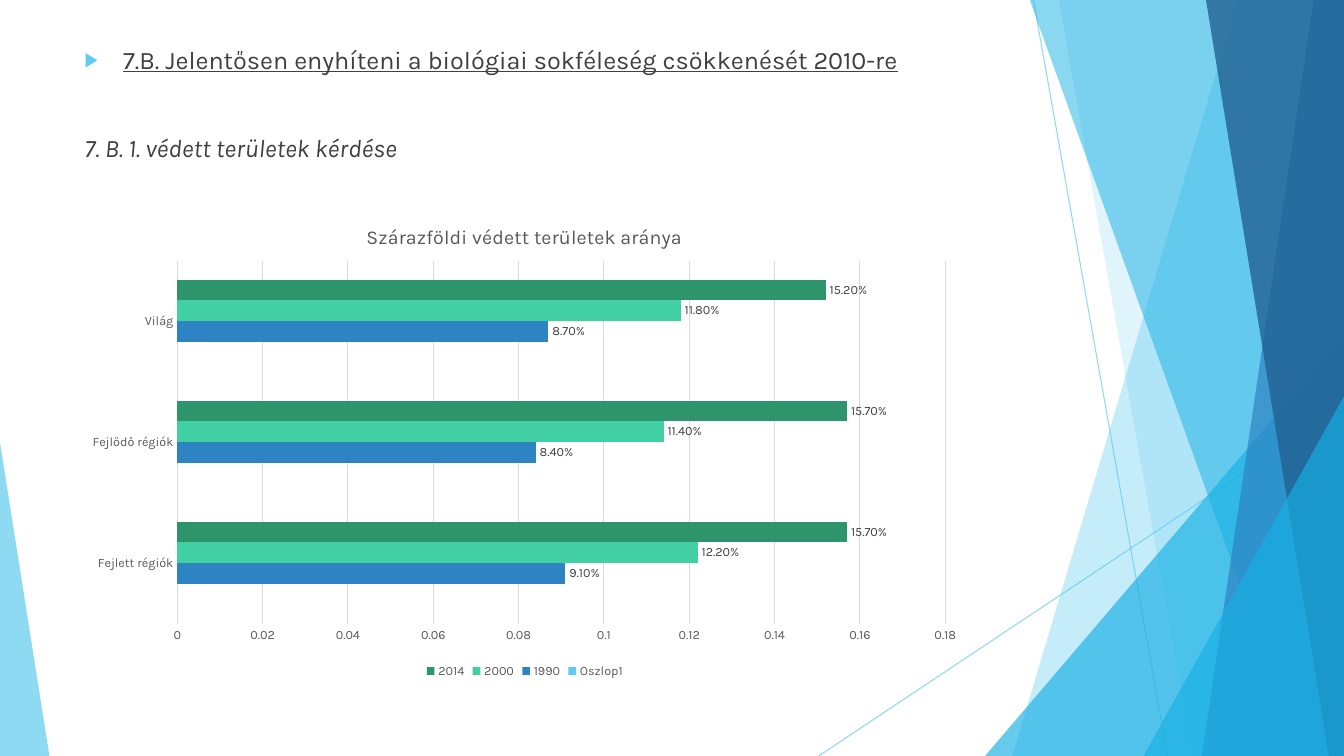
import pptx
import pptx.util
import pptx.chart.data
import pptx.dml.color
import pptx.enum.chart
import pptx.enum.shapes
import pptx.enum.text
import pptx.oxml
import pptx.oxml.ns
import lxml.etree

Inches, Pt = pptx.util.Inches, pptx.util.Pt
qn = pptx.oxml.ns.qn
FONT = "Karla"


def paint(color_format, color, alpha=100):
    color_format.rgb = pptx.dml.color.RGBColor.from_string(color)
    if alpha < 100:
        for node in color_format._xFill.iter(qn("a:srgbClr")):
            lxml.etree.SubElement(node, qn("a:alpha")).set("val", str(alpha * 1000))


def style(font, size, color):
    font.name, font.size, font.bold = FONT, Pt(size), False
    paint(font.color, color)


deck = pptx.Presentation()
deck.slide_width, deck.slide_height = Inches(13.33), Inches(7.5)
page = deck.slides.add_slide(deck.slide_layouts[1])
page.shapes.title.element.getparent().remove(page.shapes.title.element)
body = page.placeholders[1]

# Thin diagonal lines
for x1, y1, x2, y2 in [(10.25, 0, 11.58, 7.5), (13.33, 4.03, 8.12, 7.5)]:
    line = page.shapes.add_connector(pptx.enum.shapes.MSO_CONNECTOR.STRAIGHT,
                                     Inches(x1), Inches(y1), Inches(x2), Inches(y2))
    line.line.width = Pt(0.75)
    line.line.fill.solid()
    paint(line.line.fill.fore_color, "5FCBEF", 70)
    lxml.etree.SubElement(line.element.spPr, qn("a:effectLst"))

# Translucent facets: bands give top and bottom x of their left edge,
# triangles give left, top, width, height and apex position
facets = [
    ("band", (12.28, 10.04), "5FCBEF", 36),
    ("band", (10.5, 11.83), "5FCBEF", 20),
    ("triangle", (9.77, 3.33, 3.56, 4.17, 1), "17B0E4", 66),
    ("band", (10.21, 12.91), "17B0E4", 50),
    ("band", (13.03, 11.92), "2E83C3", 70),
    ("band", (11.96, 13.18), "226292", 80),
    ("triangle", (11.34, 3.93, 1.99, 3.57, 1), "17B0E4", 66),
    ("triangle", (0, 4.39, 0.49, 3.11, 0), "5FCBEF", 70),
]
for kind, numbers, color, alpha in facets:
    if kind == "band":
        top_x, bottom_x = numbers
        outline = page.shapes.build_freeform(Inches(top_x), Inches(-0.01))
        outline.add_line_segments([(Inches(x), Inches(y)) for x, y in
                                   [(13.33, -0.01), (13.33, 7.5), (bottom_x, 7.5)]])
        facet = outline.convert_to_shape()
    else:
        *frame, apex = numbers
        facet = page.shapes.add_shape(pptx.enum.shapes.MSO_SHAPE.ISOSCELES_TRIANGLE,
                                      *[Inches(n) for n in frame])
        facet.adjustments[0] = apex
    facet.shadow.inherit = False
    facet.line.fill.background()
    facet.fill.solid()
    paint(facet.fill.fore_color, color, alpha)

# Body text, in front of the facets
page.shapes._spTree.append(body.element)
body.left, body.top, body.width, body.height = [Inches(n) for n in (0.74, 0.39, 9.4, 6.22)]
body.text_frame.text = ("7.B. Jelentősen enyhíteni a biológiai sokféleség csökkenését 2010-re\n"
                        "7. B. 1. védett területek kérdése")
body.text_frame.vertical_anchor = pptx.enum.text.MSO_ANCHOR.TOP
goal, topic = body.text_frame.paragraphs
for para, space in [(goal, 10), (topic, 41)]:
    para.space_before = Pt(space)
    style(para.runs[0].font, 18, "404040")
goal.runs[0].font.underline = True
topic.runs[0].font.italic = True

goal_format = goal._p.get_or_add_pPr()
goal_format.set("marL", str(Inches(0.38)))
goal_format.set("indent", str(Inches(-0.38)))
bullet_color = lxml.etree.SubElement(goal_format, qn("a:buClr"))
lxml.etree.SubElement(bullet_color, qn("a:srgbClr")).set("val", "5FCBEF")
lxml.etree.SubElement(goal_format, qn("a:buSzPct")).set("val", "80000")
lxml.etree.SubElement(goal_format, qn("a:buChar")).set("char", "▶")
topic_format = topic._p.get_or_add_pPr()
topic_format.set("marL", "0")
topic_format.set("indent", "0")
lxml.etree.SubElement(topic_format, qn("a:buNone"))

# Chart of protected areas
series_rows = [
    ("Oszlop1", (None, None, None), "5FCBEF"),
    ("1990", (0.091, 0.084, 0.087), "2E83C3"),
    ("2000", (0.122, 0.114, 0.118), "42D0A2"),
    ("2014", (0.157, 0.157, 0.152), "2E946B"),
]
data = pptx.chart.data.CategoryChartData()
data.categories = ["Fejlett régiók", "Fejlődő régiók", "Világ"]
for name, values, color in series_rows:
    data.add_series(name, values)
chart = page.shapes.add_chart(pptx.enum.chart.XL_CHART_TYPE.BAR_CLUSTERED, Inches(0.74),
                              Inches(2), Inches(8.93), Inches(4.77), data).chart
style(chart.font, 10, "000000")
chart.has_title = True
chart.chart_title.text_frame.text = "Szárazföldi védett területek aránya"
style(chart.chart_title.text_frame.paragraphs[0].runs[0].font, 14, "595959")
chart.has_legend = True
chart.legend.position = pptx.enum.chart.XL_LEGEND_POSITION.BOTTOM
chart.legend.include_in_layout = False
style(chart.legend.font, 9, "595959")

# Bars and their labels
plot = chart.plots[0]
plot.gap_width, plot.overlap = 182, 0
plot.vary_by_categories = False
for series, (name, values, color) in zip(plot.series, series_rows):
    series.format.fill.solid()
    paint(series.format.fill.fore_color, color)
    labels = series.data_labels
    labels.show_value = True
    labels.number_format, labels.number_format_is_linked = "0.00%", False
    labels.position = pptx.enum.chart.XL_LABEL_POSITION.OUTSIDE_END
    style(labels.font, 9, "404040")

# Axes
categories, scale = chart.category_axis, chart.value_axis
for axis in (categories, scale):
    axis.major_tick_mark = axis.minor_tick_mark = pptx.enum.chart.XL_TICK_MARK.NONE
    style(axis.tick_labels.font, 9, "595959")
scale.minimum_scale, scale.maximum_scale, scale.major_unit = 0, 0.18, 0.02
scale.tick_labels.number_format, scale.tick_labels.number_format_is_linked = "General", False
scale.has_major_gridlines = True
scale.format.line.fill.background()
for line in (categories.format.line, scale.major_gridlines.format.line):
    line.width = Pt(0.75)
    line.fill.solid()
    paint(line.fill.fore_color, "D9D9D9")

# Fixed places of the title and the plot, as shares of the chart
title_node = chart.chart_title._element
plot_node = chart._chartSpace.chart.plotArea
for node, place in [(title_node, {"x": 0.32, "y": 0.04}),
                    (plot_node, {"x": 0.114, "y": 0.123, "w": 0.853, "h": 0.755})]:
    for old in node.findall(qn("c:layout")):
        node.remove(old)
    layout = lxml.etree.Element(qn("c:layout"))
    manual = lxml.etree.SubElement(layout, qn("c:manualLayout"))
    if node is plot_node:
        lxml.etree.SubElement(manual, qn("c:layoutTarget")).set("val", "inner")
    for key in ("x", "y"):
        lxml.etree.SubElement(manual, qn("c:" + key + "Mode")).set("val", "edge")
    for key, share in place.items():
        lxml.etree.SubElement(manual, qn("c:" + key)).set("val", str(share))
    node.insert(1 if node is title_node else 0, layout)

deck.save("out.pptx")
